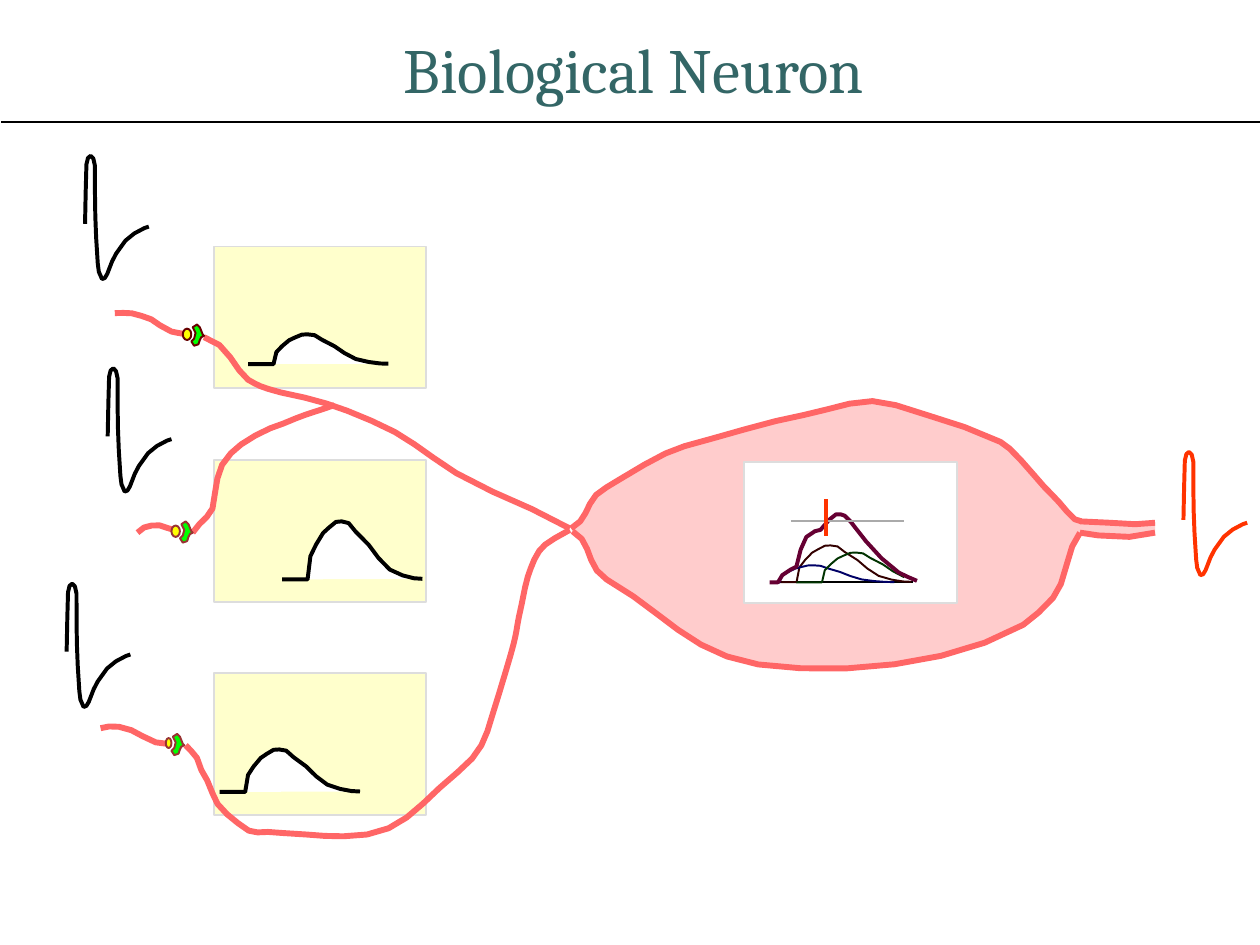
"""Build the Biological Neuron slide: synaptic inputs, dendrites, cell body and axon."""
from dataclasses import dataclass
from math import ceil, hypot, sqrt
from typing import Optional

from lxml.etree import SubElement
from pptx import Presentation
from pptx.dml.color import RGBColor
from pptx.enum.shapes import MSO_CONNECTOR, MSO_SHAPE
from pptx.enum.text import MSO_ANCHOR, PP_ALIGN
from pptx.oxml.ns import qn
from pptx.util import Inches, Pt

Points = list[tuple[float, float]]
MEMBRANE, SIGNAL, BLACK, BORDER = "FF6666", "FF3300", "000000", "DDDDDD"
TOLERANCE = .01

SPIKE = [(0, .48), (.01, .31), (0, .17), (.01, .06), (.01, .02), (.03, 0), (.04, 0),
         (.05, 0), (.07, .03), (.07, .07), (.07, .38), (.07, .48), (.09, .76),
         (.09, .79), (.1, .85), (.12, .87), (.14, .88), (.16, .83), (.17, .8),
         (.19, .75), (.19, .74), (.22, .69), (.29, .57), (.34, .55), (.42, .51),
         (.43, .5), (.44, .5), (.45, .5)]
HUMP = [(0, 0), (.02, .4), (.06, .6), (.09, .72), (.11, .8), (.15, .89), (.2, .99), (.24, 1),
        (.29, .97), (.34, .82), (.43, .6), (.5, .37), (.58, .17), (.67, .07), (.75, .02), (.81, .01)]
RECEPTOR = [(.02, .1), (.03, .06), (.01, .02), (.04, 0), (.06, .02), (.08, .07), (.09, .08),
            (.07, .09), (.06, .11), (.05, .14), (.02, .15), (0, .12)]
SOMA_TOP = [(4.03, 3.73), (4.17, 3.66), (4.12, 3.52), (4.28, 3.44), (4.42, 3.36), (4.67, 3.19),
            (4.83, 3.15), (5.06, 3.09), (5.44, 2.97), (5.67, 2.93), (5.89, 2.89), (6.1, 2.78),
            (6.32, 2.86), (6.58, 2.95), (6.79, 2.99), (7.06, 3.12), (7.15, 3.16), (7.34, 3.42),
            (7.43, 3.5), (7.48, 3.54), (7.58, 3.7), (7.63, 3.68)]
SOMA_BOTTOM = [(4.04, 3.75), (4.18, 3.82), (4.13, 4), (4.28, 4.09), (4.69, 4.32), (4.86, 4.61),
               (5.35, 4.69), (5.92, 4.77), (6.72, 4.7), (7.22, 4.41), (7.3, 4.36), (7.36, 4.29),
               (7.43, 4.22), (7.52, 4.13), (7.53, 3.85), (7.62, 3.76)]
AXON_TOP = [(7.62, 3.68), (7.83, 3.69), (8.01, 3.7), (8.15, 3.69)]
AXON_BOTTOM = [(7.62, 3.76), (7.75, 3.78), (7.97, 3.79), (8.15, 3.76)]
DENDRITES = [
    [(4.02, 3.73), (3.77, 3.58), (3.45, 3.48), (3.22, 3.34), (2.98, 3.19), (2.87, 3.07),
     (2.62, 2.97), (2.37, 2.86), (2.23, 2.82), (1.98, 2.77), (1.83, 2.73), (1.82, 2.72),
     (1.75, 2.68), (1.66, 2.62), (1.61, 2.42), (1.44, 2.38)],
    [(2.36, 2.86), (2.16, 2.93), (2.19, 2.91), (2, 2.99), (1.89, 3.02), (1.7, 3.12),
     (1.63, 3.2), (1.52, 3.3), (1.53, 3.44), (1.5, 3.59), (1.47, 3.66), (1.4, 3.69), (1.36, 3.76)],
    [(4.02, 3.74), (3.84, 3.84), (3.82, 3.85), (3.77, 3.95), (3.73, 4.05), (3.72, 4.06),
     (3.68, 4.27), (3.62, 4.53), (3.68, 4.38), (3.52, 4.9), (3.43, 5.17), (3.44, 5.28),
     (3.23, 5.45), (3, 5.63), (2.87, 5.85), (2.59, 5.89), (2.33, 5.92), (2.25, 5.89),
     (2, 5.88), (1.82, 5.85), (1.8, 5.92), (1.68, 5.81), (1.61, 5.76), (1.51, 5.67),
     (1.5, 5.6), (1.47, 5.49), (1.41, 5.45), (1.39, 5.35), (1.37, 5.31), (1.33, 5.29), (1.31, 5.26)]]
INPUT_AXONS = [
    [(1.32, 2.36), (1.26, 2.35), (1.25, 2.35), (1.21, 2.34), (1.11, 2.3), (1.08, 2.24),
     (1, 2.23), (.92, 2.2), (.88, 2.21), (.81, 2.21)],
    [(1.25, 3.76), (1.22, 3.74), (1.21, 3.73), (1.19, 3.73), (1.14, 3.71), (1.11, 3.7),
     (1.07, 3.71), (1.03, 3.71), (1, 3.73), (.97, 3.76)],
    [(1.18, 5.25), (1.15, 5.24), (1.12, 5.24), (1.1, 5.24), (.99, 5.2), (.94, 5.14),
     (.84, 5.13), (.78, 5.12), (.76, 5.13), (.71, 5.14)]]
SUMMED_POTENTIAL = [
    (5.43, 4.11), (5.49, 4.11), (5.52, 4.06), (5.58, 4.02), (5.62, 4), (5.65, 3.88),
    (5.69, 3.79), (5.75, 3.75), (5.79, 3.74), (5.85, 3.67), (5.9, 3.63), (5.93, 3.63),
    (5.96, 3.64), (6, 3.68), (6.11, 3.82), (6.22, 3.94), (6.34, 4.04), (6.4, 4.07), (6.47, 4.1)]


@dataclass
class Potential:
    """A postsynaptic wave: start, height, lead-in and number of hump points."""
    left: float
    baseline: float
    height: float
    color: str = BLACK
    lead: float = .18
    count: int = len(HUMP)


@dataclass
class Synapse:
    """One input: its spike, chart panel, wave, vesicle and receptor."""
    spike: tuple[float, float]
    panel_top: float
    wave: Potential
    vesicle: tuple[float, float, float, float]
    receptor: tuple[float, float]
    outline: str


SYNAPSES = [
    Synapse((.6, 1.1), 1.74, Potential(1.75, 2.57, .21), (1.29, 2.32, .06, .08), (1.35, 2.29), "660000"),
    Synapse((.76, 2.6), 3.25, Potential(1.99, 4.09, .41), (1.21, 3.71, .06, .08), (1.27, 3.68), "993333"),
    Synapse((.47, 4.12), 4.75, Potential(1.55, 5.59, .3), (1.17, 5.21, .04, .07), (1.21, 5.18), "993333")]
BODY_WAVES = [Potential(5.44, 4.11, .26, "330000"),
              Potential(5.44, 4.11, .12, "000066", lead=.06),
              Potential(5.62, 4.11, .21, "003300", count=13)]


def rgb(color: str) -> RGBColor:
    """Turn a hex string into a colour."""
    return RGBColor.from_string(color)


def shifted(points: Points, origin: tuple[float, float]) -> Points:
    """Move points to an origin."""
    return [(origin[0] + x, origin[1] + y) for x, y in points]


def smooth(points: Points) -> Points:
    """Sample a chain of cubic Bezier segments, more finely where they bend."""
    samples = [points[0]]
    for first in range(0, len(points) - 3, 3):
        segment = points[first:first + 4]
        bend = max(hypot(a[0] - 2 * b[0] + c[0], a[1] - 2 * b[1] + c[1])
                   for a, b, c in zip(segment, segment[1:], segment[2:]))
        steps = max(1, ceil(sqrt(.75 * bend / TOLERANCE)))
        for step in range(1, steps + 1):
            t = step / steps
            weights = ((1 - t) ** 3, 3 * t * (1 - t) ** 2, 3 * t * t * (1 - t), t ** 3)
            samples.append((sum(w * p[0] for w, p in zip(weights, segment)),
                            sum(w * p[1] for w, p in zip(weights, segment))))
    return samples


def style(shape, fill: Optional[str], line: Optional[str], width: float) -> None:
    """Set fill and line, without a shadow."""
    shape.shadow.inherit = False
    for target, color in ((shape.fill, fill), (shape.line.fill, line)):
        if color:
            target.solid()
            target.fore_color.rgb = rgb(color)
        else:
            target.background()
    if line:
        shape.line.width = Pt(width)


def draw_outline(page, points: Points, line: Optional[str] = None, width: float = 1,
                 fill: Optional[str] = None, close: bool = False) -> None:
    """Draw a freeform through points."""
    corners = [(Inches(x), Inches(y)) for x, y in points]
    builder = page.shapes.build_freeform(*corners[0])
    builder.add_line_segments(corners[1:], close=close)
    style(builder.convert_to_shape(), fill, line, width)


def draw_preset(page, kind: MSO_SHAPE, place: tuple, fill: str, line: str) -> None:
    """Draw a filled preset shape."""
    style(page.shapes.add_shape(kind, *map(Inches, place)), fill, line, 1)


def draw_line(page, ends: tuple, color: str, width: float = 1) -> None:
    """Draw a straight line."""
    connector = page.shapes.add_connector(MSO_CONNECTOR.STRAIGHT, *map(Inches, ends))
    connector.line.color.rgb = rgb(color)
    connector.line.width = Pt(width)
    SubElement(connector._element.spPr, qn("a:effectLst"))


def draw_wave(page, wave: Potential, width: float = 1, fill: Optional[str] = None) -> None:
    """Draw a flat lead-in followed by a scaled hump."""
    hump = [(wave.lead + x, -y * wave.height) for x, y in HUMP[:wave.count]]
    points = shifted([(0, 0)] + hump, (wave.left, wave.baseline))
    draw_outline(page, points, wave.color, width, fill)


def write_title(page, text: str, *, font: str, size: float, color: str) -> None:
    """Place and format the slide title."""
    box = page.shapes.title
    box.left, box.top, box.width, box.height = map(Inches, (1.65, .22, 5.65, .53))
    frame = box.text_frame
    frame.margin_left = frame.margin_right = frame.margin_top = frame.margin_bottom = 0
    frame.vertical_anchor = MSO_ANCHOR.MIDDLE
    para = frame.paragraphs[0]
    para.alignment = PP_ALIGN.CENTER
    span = para.add_run()
    span.text = text
    span.font.name, span.font.size, span.font.color.rgb = font, Pt(size), rgb(color)


def main() -> None:
    """Draw the slide and save the deck."""
    deck = Presentation()
    deck.slide_width, deck.slide_height = Inches(8.89), Inches(6.67)
    page = deck.slides.add_slide(deck.slide_layouts[5])
    write_title(page, "Biological Neuron", font="Cambria", size=32, color="336666")
    draw_line(page, (.01, .86, 8.89, .86), BLACK)

    top, bottom = smooth(SOMA_TOP) + AXON_TOP, smooth(SOMA_BOTTOM) + AXON_BOTTOM
    draw_outline(page, top + bottom[::-1], fill="FFCCCC", close=True)
    for synapse in SYNAPSES:
        draw_outline(page, smooth(shifted(SPIKE, synapse.spike)), BLACK, 2)
        draw_preset(page, MSO_SHAPE.RECTANGLE, (1.51, synapse.panel_top, 1.5, 1), "FFFFCC", BORDER)
        draw_wave(page, synapse.wave, 2, "FFFFFF")

    draw_preset(page, MSO_SHAPE.RECTANGLE, (5.25, 3.26, 1.5, 1), "FFFFFF", BORDER)
    draw_line(page, (5.44, 4.11, 6.44, 4.11), BLACK)
    for wave in BODY_WAVES:
        draw_wave(page, wave)
    draw_outline(page, SUMMED_POTENTIAL, "660033", 2)
    draw_line(page, (5.58, 3.68, 6.38, 3.68), "AAAAAA")
    draw_line(page, (5.83, 3.78, 5.83, 3.52), SIGNAL, 2)
    draw_outline(page, smooth(shifted(SPIKE, (8.35, 3.19))), SIGNAL, 2)

    for curve in (SOMA_TOP, SOMA_BOTTOM, *DENDRITES, *INPUT_AXONS):
        draw_outline(page, smooth(curve), MEMBRANE, 3)
    for edge in (AXON_TOP, AXON_BOTTOM):
        draw_outline(page, edge, MEMBRANE, 3)
    for synapse in SYNAPSES:
        draw_preset(page, MSO_SHAPE.OVAL, synapse.vesicle, "FFFF00", synapse.outline)
        draw_outline(page, shifted(RECEPTOR, synapse.receptor), synapse.outline,
                     fill="00FF00", close=True)
    deck.save("out.pptx")


if __name__ == "__main__":
    main()
